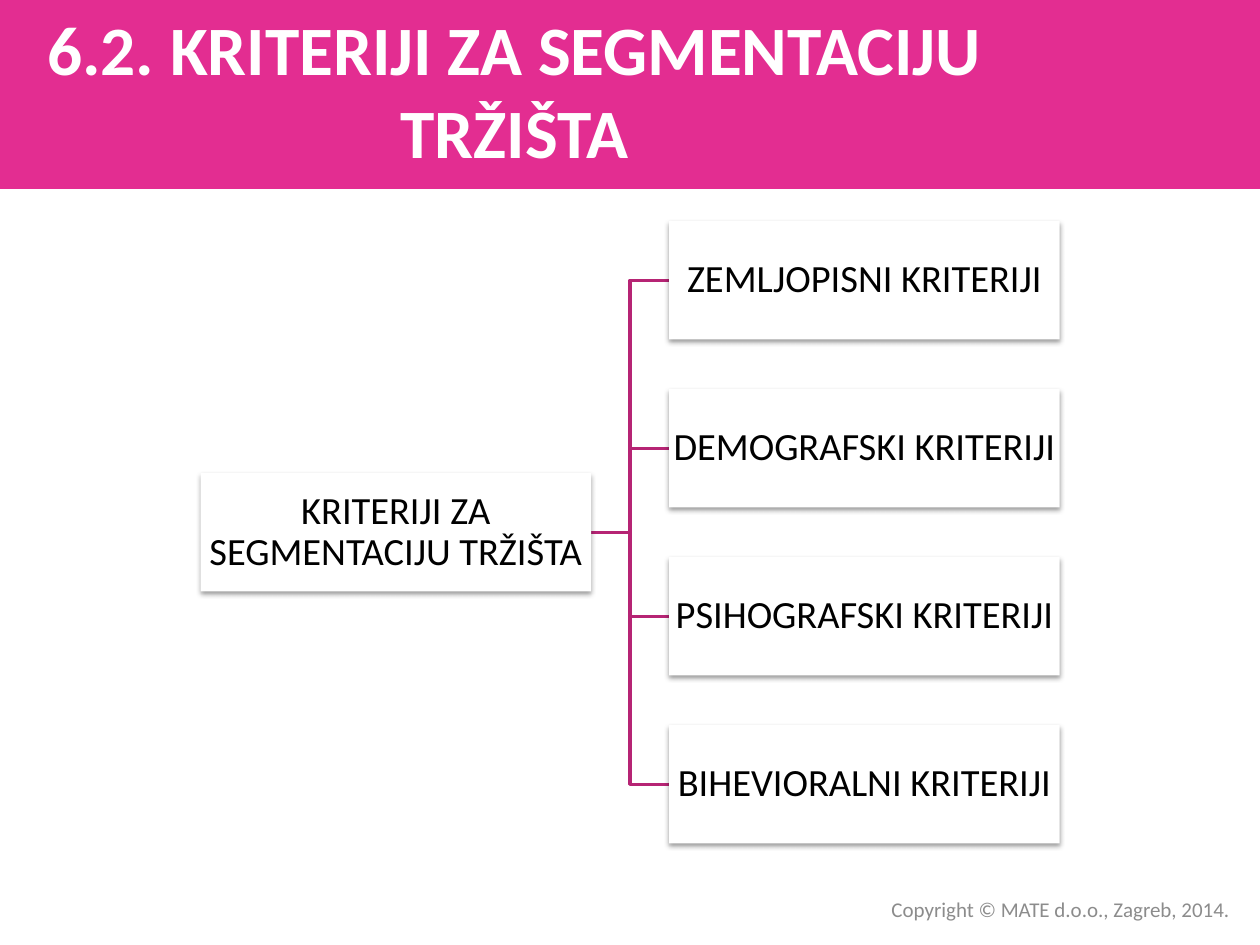
from lxml import etree
from pptx import Presentation
from pptx.dml.color import RGBColor
from pptx.enum.shapes import MSO_SHAPE
from pptx.enum.text import MSO_ANCHOR, PP_ALIGN
from pptx.oxml.ns import qn
from pptx.util import Pt

RECTANGLE = MSO_SHAPE.RECTANGLE
MIDDLE = MSO_ANCHOR.MIDDLE
CENTER = PP_ALIGN.CENTER
RIGHT = PP_ALIGN.RIGHT

PINK = RGBColor(0xE3, 0x2D, 0x91)
DARK_PINK = RGBColor(0xB6, 0x24, 0x74)
WHITE = RGBColor(0xFF, 0xFF, 0xFF)
BLACK = RGBColor(0x00, 0x00, 0x00)
GRAY = RGBColor(0x8C, 0x8C, 0x8C)

FONT = "Calibri"
CARD_WIDTH, CARD_HEIGHT = 223.2, 67.6
CARD_INSET = 1.1
ROOT = "KRITERIJI ZA SEGMENTACIJU TRŽIŠTA"
CRITERIA = [
    "ZEMLJOPISNI KRITERIJI",
    "DEMOGRAFSKI KRITERIJI",
    "PSIHOGRAFSKI KRITERIJI",
    "BIHEVIORALNI KRITERIJI",
]


def write(frame, text, size, color, align, bold=False):
    frame.word_wrap = True
    frame.vertical_anchor = MIDDLE
    paragraph = frame.paragraphs[0]
    paragraph.alignment = align
    run = paragraph.add_run()
    run.text = text
    run.font.name = FONT
    run.font.size = Pt(size)
    run.font.bold = bold
    run.font.color.rgb = color
    return paragraph


def add_rectangle(slide, left, top, width, height, color):
    rectangle = slide.shapes.add_shape(
        RECTANGLE, Pt(left), Pt(top), Pt(width), Pt(height))
    rectangle.shadow.inherit = False
    rectangle.fill.solid()
    rectangle.fill.fore_color.rgb = color
    rectangle.line.fill.background()
    return rectangle


def add_soft_shadow(card):
    effects = card._element.spPr.find(qn("a:effectLst"))
    shadow = etree.SubElement(
        effects, qn("a:outerShdw"), blurRad=str(Pt(3.1)), dist=str(Pt(1.6)),
        dir="5400000", algn="ctr", rotWithShape="0")
    tint = etree.SubElement(shadow, qn("a:srgbClr"), val=str(BLACK))
    etree.SubElement(tint, qn("a:alpha"), val="38000")


def add_card(slide, left, top, text):
    card = add_rectangle(slide, left, top, CARD_WIDTH, CARD_HEIGHT, WHITE)
    add_soft_shadow(card)
    frame = card.text_frame
    frame.margin_left = frame.margin_right = Pt(CARD_INSET)
    frame.margin_top = frame.margin_bottom = Pt(CARD_INSET)
    write(frame, text, 22, BLACK, CENTER).line_spacing = 0.9


def add_branch(slide, left, start, right, end):
    bend = (left + right) / 2
    builder = slide.shapes.build_freeform(Pt(left), Pt(start))
    builder.add_line_segments(
        [(Pt(bend), Pt(start)), (Pt(bend), Pt(end)), (Pt(right), Pt(end))],
        close=False)
    branch = builder.convert_to_shape()
    branch.shadow.inherit = False
    branch.fill.background()
    branch.line.color.rgb = DARK_PINK
    branch.line.width = Pt(2)


def add_header(slide, left, top, width, height):
    add_rectangle(slide, left, top, width, height, PINK)
    title = slide.shapes.add_textbox(
        Pt(left), Pt(top + 6), Pt(588), Pt(height - 18))
    write(title.text_frame, "6.2. KRITERIJI ZA SEGMENTACIJU TRŽIŠTA",
          39.6, WHITE, CENTER, bold=True)


def add_criteria_tree(slide, left, top, width, height):
    criteria_left = left + width - CARD_WIDTH
    step = (height - CARD_HEIGHT) / (len(CRITERIA) - 1)
    criteria_tops = [top + step * row for row in range(len(CRITERIA))]
    root_top = top + (height - CARD_HEIGHT) / 2
    half = CARD_HEIGHT / 2
    for criterion_top in criteria_tops:
        add_branch(slide, left + CARD_WIDTH, root_top + half,
                   criteria_left, criterion_top + half)
    add_card(slide, left, root_top, ROOT)
    for criterion, criterion_top in zip(CRITERIA, criteria_tops):
        add_card(slide, criteria_left, criterion_top, criterion)


def add_footer(slide, left, top, width, height):
    copyright_line = slide.shapes.add_textbox(
        Pt(left), Pt(top), Pt(width), Pt(height))
    write(copyright_line.text_frame, "Copyright © MATE d.o.o., Zagreb, 2014.",
          12, GRAY, RIGHT)


def main():
    presentation = Presentation()
    presentation.slide_width = Pt(720)
    presentation.slide_height = Pt(540)
    slide = presentation.slides.add_slide(presentation.slide_layouts[6])
    add_header(slide, 0, 0, 720, 108)
    add_criteria_tree(slide, 114.6, 126.4, 491, 355.6)
    add_footer(slide, 337.7, 508.5, 372.2, 21.6)
    presentation.save("out.pptx")


if __name__ == "__main__":
    main()
